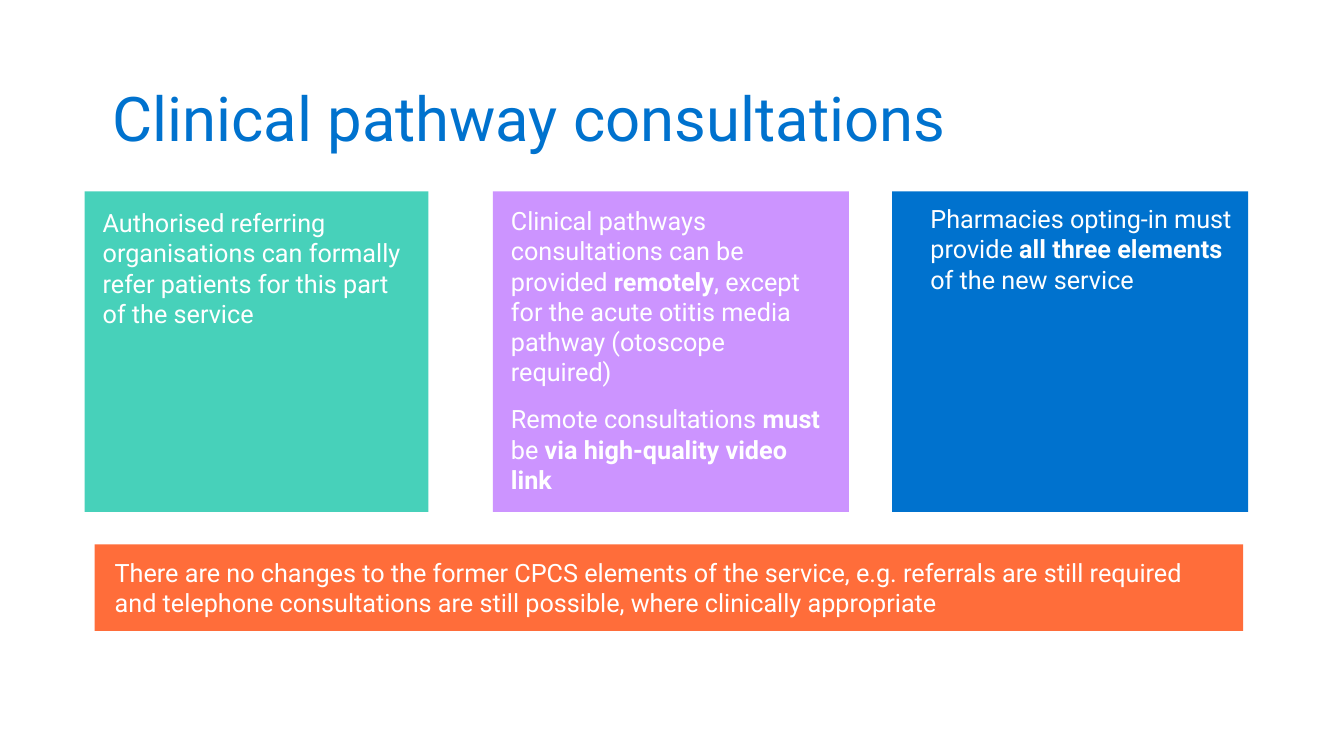
from typing import NamedTuple

from pptx import Presentation
from pptx.dml.color import RGBColor as RGB
from pptx.enum.shapes import MSO_SHAPE as SHAPE
from pptx.enum.text import MSO_ANCHOR as ANCHOR
from pptx.util import Inches, Pt

COLORS = {"blue": "0072CE", "teal": "47D1BA", "lilac": "CC94FF",
          "orange": "FF6D3A", "white": "FFFFFF"}
WIDTH, HEIGHT = Inches(13.33), Inches(7.5)
FONT = "Roboto"
CARD_TOP, CARD_HEIGHT = 25.33, 42.4


class Area(NamedTuple):
    """Left, top, width and height in percent of the slide's size."""
    left: float
    top: float
    width: float
    height: float

    def emu(self) -> tuple[int, ...]:
        """Return the area in slide units."""
        sides = (WIDTH, HEIGHT, WIDTH, HEIGHT)
        return tuple(round(share * side / 100) for share, side in zip(self, sides))


class Span(NamedTuple):
    """A stretch of text in one weight."""
    text: str
    bold: bool = False


class Panel(NamedTuple):
    """A coloured block with the text laid over it."""
    color: str
    block: Area
    text_area: Area
    paragraphs: list[list[Span]]


TITLE_AREA = Area(7.65, 5.33, 85.45, 19.33)
PANELS = [
    Panel("teal", Area(6.3, CARD_TOP, 25.58, CARD_HEIGHT), Area(6.9, 26.8, 24.61, 17.47), [
        [Span("Authorised referring organisations can formally refer patients "
              "for this part of the service")],
    ]),
    Panel("lilac", Area(36.68, CARD_TOP, 26.48, CARD_HEIGHT), Area(37.28, 26.53, 24.91, 40), [
        [Span("Clinical pathways consultations can be provided "),
         Span("remotely", True),
         Span(", except for the acute otitis media pathway (otoscope required)")],
        [Span("Remote consultations "), Span("must", True), Span(" be "),
         Span("via high-quality video link", True)],
    ]),
    Panel("blue", Area(66.39, CARD_TOP, 26.48, CARD_HEIGHT), Area(68.49, 26.27, 24.68, 23.73), [
        [Span("Pharmacies opting-in must provide "),
         Span("all three elements", True),
         Span(" of the new service")],
    ]),
    Panel("orange", Area(7.05, 72, 85.45, 11.47), Area(7.8, 73.07, 84.02, 9.47), [
        [Span("There are no changes to the former CPCS elements of the service, "
              "e.g. referrals are still required and telephone consultations are "
              "still possible, where clinically appropriate")],
    ]),
]


def add_text(slide, area: Area, paragraphs: list[list[Span]], size: float,
             color: str, anchor=ANCHOR.TOP, line_spacing: float = 1.0) -> None:
    """Add a wrapped text box with one paragraph per list of spans."""
    tf = slide.shapes.add_textbox(*area.emu()).text_frame
    tf.word_wrap = True
    tf.vertical_anchor = anchor
    for i, spans in enumerate(paragraphs):
        p = tf.add_paragraph() if i else tf.paragraphs[0]
        p.line_spacing = line_spacing
        if i:
            p.space_before = Pt(12)
        for span in spans:
            r = p.add_run()
            r.text = span.text
            r.font.name = FONT
            r.font.size = Pt(size)
            r.font.bold = span.bold
            r.font.color.rgb = RGB.from_string(COLORS[color])


def add_panel(slide, panel: Panel) -> None:
    """Draw a panel's block and its text."""
    sp = slide.shapes.add_shape(SHAPE.RECTANGLE, *panel.block.emu())
    sp.shadow.inherit = False
    sp.fill.solid()
    sp.fill.fore_color.rgb = RGB.from_string(COLORS[panel.color])
    sp.line.fill.background()
    add_text(slide, panel.text_area, panel.paragraphs, 18, "white")


def main() -> None:
    """Build and save the slide."""
    prs = Presentation()
    prs.slide_width, prs.slide_height = WIDTH, HEIGHT
    s = prs.slides.add_slide(prs.slide_layouts[6])
    add_text(s, TITLE_AREA, [[Span("Clinical pathway consultations")]], 44, "blue",
             ANCHOR.MIDDLE, 1.1)
    for panel in PANELS:
        add_panel(s, panel)
    prs.save("out.pptx")


if __name__ == "__main__":
    main()
